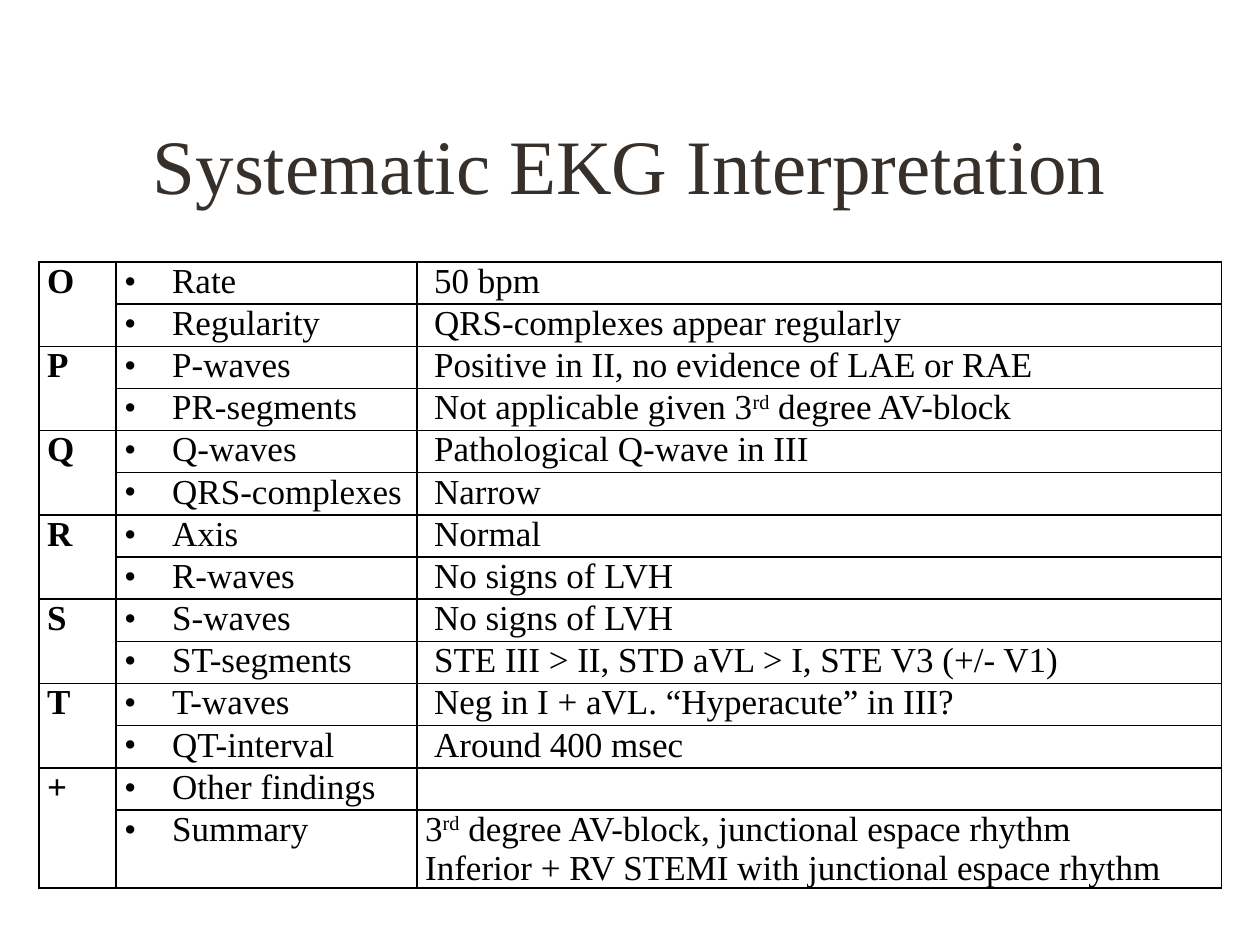
from lxml import etree
from pptx import Presentation
from pptx.dml.color import RGBColor
from pptx.enum.text import MSO_ANCHOR, PP_ALIGN
from pptx.oxml.ns import qn
from pptx.util import Cm, Pt

CENTER = PP_ALIGN.CENTER
MIDDLE, TOP = MSO_ANCHOR.MIDDLE, MSO_ANCHOR.TOP
BROWN = RGBColor(0x37, 0x30, 0x2A)
BLACK = RGBColor(0, 0, 0)
FACE = "Times New Roman"

HEAD = {"name": FACE, "size": Pt(44), "bold": False}
BODY = {"name": FACE, "size": Pt(20), "bold": False}
BOLD = {**BODY, "bold": True}
PAD = {"margin_left": Cm(0.16), "margin_right": Cm(0.16),
       "margin_top": 0, "margin_bottom": 0, "vertical_anchor": TOP}
INSET = {**PAD, "margin_left": Cm(0.34)}

COLS = [1.55, 6.07, 16.21]
ROW, LAST = 0.85, 1.57

# Each letter has two checks; text between carets is raised.
CHECKS = [
    ("O", [("Rate", "50 bpm"),
           ("Regularity", "QRS-complexes appear regularly")]),
    ("P", [("P-waves", "Positive in II, no evidence of LAE or RAE"),
           ("PR-segments", "Not applicable given 3^rd^ degree AV-block")]),
    ("Q", [("Q-waves", "Pathological Q-wave in III"),
           ("QRS-complexes", "Narrow")]),
    ("R", [("Axis", "Normal"),
           ("R-waves", "No signs of LVH")]),
    ("S", [("S-waves", "No signs of LVH"),
           ("ST-segments", "STE III > II, STD aVL > I, STE V3 (+/- V1)")]),
    ("T", [("T-waves", "Neg in I + aVL. “Hyperacute” in III?"),
           ("QT-interval", "Around 400 msec")]),
    ("+", [("Other findings", ""),
           ("Summary", "3^rd^ degree AV-block, junctional espace rhythm\n"
                       "Inferior + RV STEMI with junctional espace rhythm")]),
]


def apply(item, form):
    for key, value in form.items():
        setattr(item, key, value)


def add_run(para, text, form, color, raised=False):
    run = para.add_run()
    run.text = text
    apply(run.font, form)
    run.font.color.rgb = color
    if raised:
        run.font._element.set("baseline", "30000")


def add_bullet(para):
    props = para._p.get_or_add_pPr()
    props.set("marL", str(Cm(0.97)))
    props.set("indent", str(-Cm(0.97)))
    etree.SubElement(props, qn("a:buFont")).set("typeface", FACE)
    etree.SubElement(props, qn("a:buChar")).set("char", "•")


def add_grid(cell):
    """Draw a thin black line on all four sides of a cell."""
    props = cell._tc.get_or_add_tcPr()
    for side in ("lnL", "lnR", "lnT", "lnB"):
        line = etree.SubElement(props, qn(f"a:{side}"), w=str(Pt(1)))
        fill = etree.SubElement(line, qn("a:solidFill"))
        etree.SubElement(fill, qn("a:srgbClr")).set("val", str(BLACK))


def fill_cell(cell, text, form=BODY, pad=PAD, bullet=False):
    apply(cell, pad)
    frame = cell.text_frame
    for row, line in enumerate(text.split("\n")):
        para = frame.add_paragraph() if row else frame.paragraphs[0]
        if bullet:
            add_bullet(para)
        for part, words in enumerate(line.split("^")):
            if words:
                add_run(para, words, form, BLACK, raised=part % 2 == 1)


def add_title(slide, text):
    title = slide.shapes.title
    apply(title, {"left": Cm(1.9), "top": Cm(1.7),
                  "width": Cm(21.6), "height": Cm(3.18)})
    apply(title.text_frame, {"vertical_anchor": MIDDLE, "word_wrap": True})
    para = title.text_frame.paragraphs[0]
    para.alignment = CENTER
    add_run(para, text, HEAD, BROWN)


def add_checks(slide):
    count = 2 * len(CHECKS)
    high = ROW * (count - 1) + LAST
    table = slide.shapes.add_table(count, len(COLS), Cm(0.79), Cm(5.28),
                                   Cm(sum(COLS)), Cm(high)).table
    apply(table, {"first_row": False, "horz_banding": False})
    for col, width in zip(table.columns, COLS):
        col.width = Cm(width)
    for row in table.rows:
        row.height = Cm(ROW)
    table.rows[count - 1].height = Cm(LAST)
    for cell in table.iter_cells():
        apply(cell, PAD)
        add_grid(cell)
        cell.fill.background()

    for group, (letter, pairs) in enumerate(CHECKS):
        top = 2 * group
        table.cell(top, 0).merge(table.cell(top + 1, 0))
        fill_cell(table.cell(top, 0), letter, BOLD)
        for row, (check, result) in enumerate(pairs, top):
            fill_cell(table.cell(row, 1), check, bullet=True)
            pad = PAD if row == count - 1 else INSET
            fill_cell(table.cell(row, 2), result, pad=pad)


def main():
    deck = Presentation()
    apply(deck, {"slide_width": Cm(25.4), "slide_height": Cm(19.05)})
    slide = deck.slides.add_slide(deck.slide_layouts[5])
    add_title(slide, "Systematic EKG Interpretation")
    add_checks(slide)
    deck.save("out.pptx")


if __name__ == "__main__":
    main()
